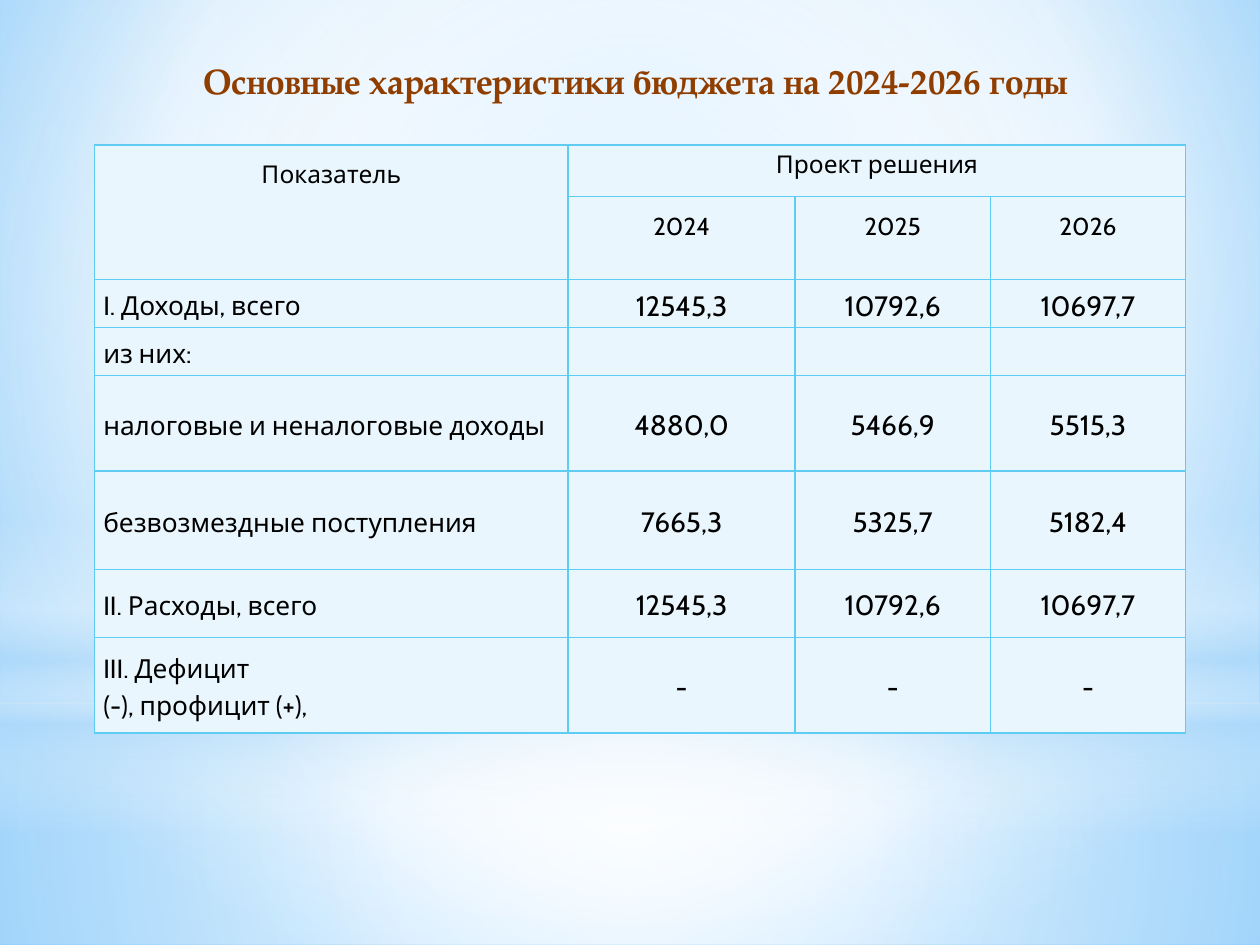
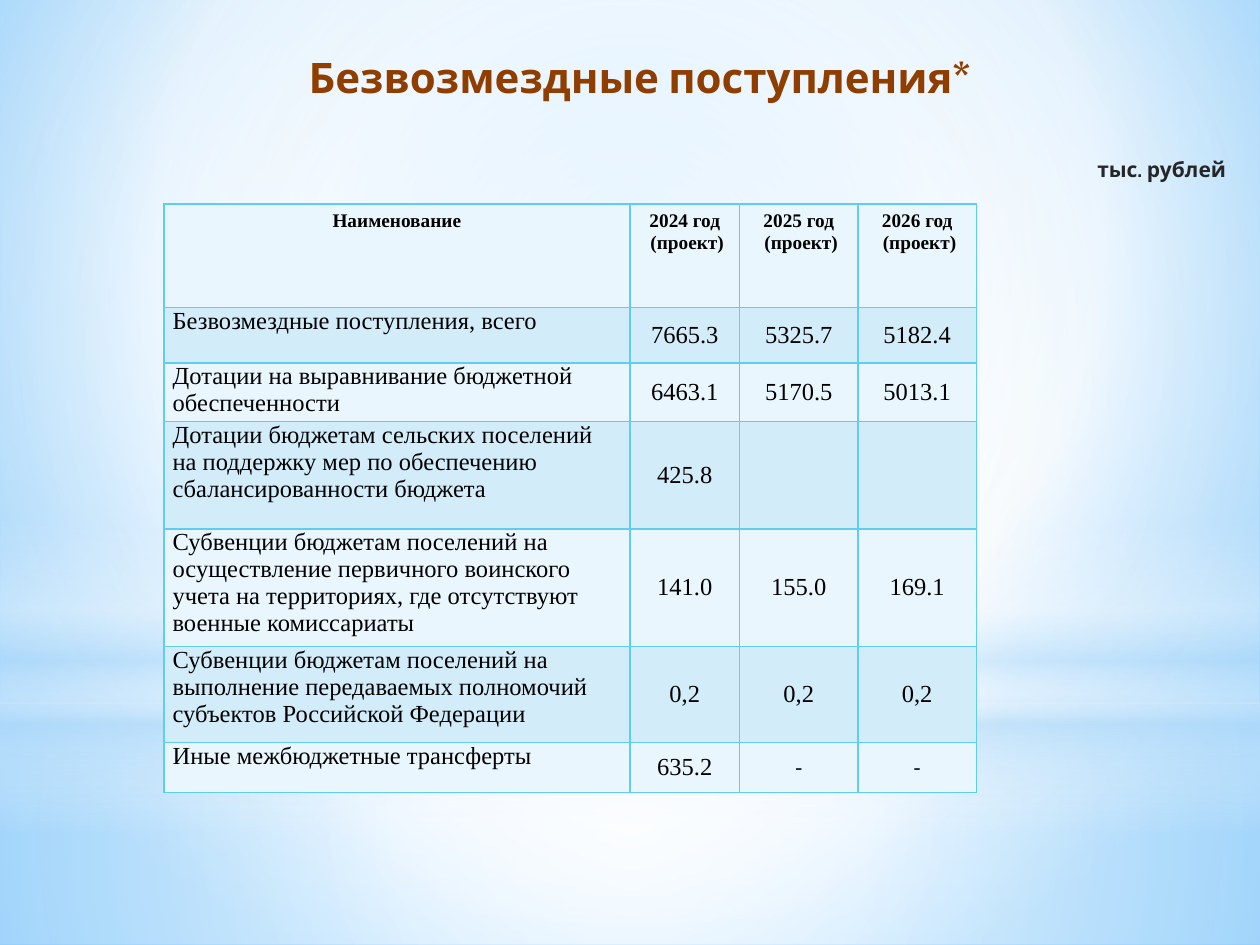
from dataclasses import dataclass

from lxml import etree
from pptx import Presentation
from pptx.dml.color import RGBColor
from pptx.enum.shapes import MSO_SHAPE
from pptx.enum.text import MSO_ANCHOR, PP_ALIGN
from pptx.oxml import parse_xml
from pptx.oxml.ns import nsdecls, qn
from pptx.util import Inches, Pt

RECT, OVAL = MSO_SHAPE.RECTANGLE, MSO_SHAPE.OVAL
LEFT, MID, RIGHT = PP_ALIGN.LEFT, PP_ALIGN.CENTER, PP_ALIGN.RIGHT
TOP, CENTER = MSO_ANCHOR.TOP, MSO_ANCHOR.MIDDLE


@dataclass(frozen=True)
class Theme:
    title: str = "903E00"
    ink: str = "000000"
    note: str = "262626"
    white: str = "FFFFFF"
    mist: str = "B4DCFA"
    sky: str = "9ED5FF"
    deep: str = "5BB9FF"
    pale: str = "EAF6FD"
    band: str = "D2ECFA"
    edge: str = "5ECCF3"
    sans: str = "Cabin"
    book: str = "TeX Gyre Pagella"
    serif: str = "Times New Roman"
    big: int = 24
    head: int = 20
    num: int = 16
    item: int = 15
    cell: int = 14
    small: int = 12
    tiny: int = 11


class Deck:
    def __init__(self, theme):
        self.theme = theme
        self.prs = Presentation()
        self.prs.slide_width, self.prs.slide_height = Inches(10), Inches(7.5)

    def start(self):
        self.slide = self.prs.slides.add_slide(self.prs.slide_layouts[6])
        self.scene()

    def blend(self, fill, root, stops, focus=None):
        fill.gradient()
        grad = next(root.iter(qn("a:gradFill")))
        marks = "".join(
            f'<a:gs pos="{pos * 1000}"><a:srgbClr val="{color}">'
            f'<a:alpha val="{alpha * 1000}"/></a:srgbClr></a:gs>'
            for pos, color, alpha in stops)
        if focus:
            sides = " ".join(f'{side}="{part * 1000}"' for side, part in zip("ltrb", focus))
            way = f'<a:path path="circle"><a:fillToRect {sides}/></a:path>'
        else:
            way = '<a:lin ang="5400000" scaled="0"/>'
        grad.getparent().replace(grad, parse_xml(
            f'<a:gradFill {nsdecls("a")} rotWithShape="1"><a:gsLst>{marks}</a:gsLst>{way}</a:gradFill>'))

    def glow(self, kind, top, height, stops, focus=(50, 50, 50, 50)):
        shape = self.slide.shapes.add_shape(kind, 0, Inches(top), Inches(10), Inches(height))
        shape.shadow.inherit = False
        shape.line.fill.background()
        self.blend(shape.fill, shape.element, stops, focus)

    def scene(self):
        t = self.theme
        self.blend(self.slide.background.fill, self.slide.element,
                   [(0, t.sky, 100), (60, t.white, 100), (100, t.deep, 100)], (20, 10, 20, 60))
        self.glow(RECT, 5.58, 1.92, [(0, t.white, 91), (37, t.white, 76), (100, t.mist, 79)])
        self.glow(RECT, 0, 5.58, [(0, t.white, 89), (48, t.white, 62), (100, t.mist, 79)])
        self.glow(RECT, 4.12, 2.5, [(0, t.white, 0), (29, t.white, 30), (45, t.mist, 40),
                                    (55, t.white, 26), (65, t.mist, 60), (100, t.white, 0)], None)
        self.glow(OVAL, 1.75, 5.58, [(0, t.white, 100), (56, t.white, 0)])

    def words(self, frame, text, size, face, color, bold=False, align=MID, lead=None):
        frame.text = text
        for para in frame.paragraphs:
            para.alignment = align
            para.line_spacing = lead
            font = para.font
            font.size, font.name, font.bold = Pt(size), face, bold
            font.color.rgb = RGBColor.from_string(color)

    def text(self, top, height, text, size, face, color, align=MID, anchor=TOP, drop=0.05):
        box = self.slide.shapes.add_textbox(Inches(0.33), Inches(top), Inches(9.5), Inches(height))
        frame = box.text_frame
        frame.word_wrap = True
        frame.vertical_anchor = anchor
        frame.margin_top = Inches(drop)
        self.words(frame, text, size, face, color, True, align)

    def grid(self, left, top, cols, rows):
        table = self.slide.shapes.add_table(
            len(rows), len(cols), Inches(left), Inches(top),
            Inches(sum(cols)), Inches(sum(rows))).table
        table.first_row = table.horz_banding = False
        for col, width in zip(table.columns, cols):
            col.width = Inches(width)
        for row, height in zip(table.rows, rows):
            row.height = Inches(height)
        return table

    def cell(self, cell, text, size, face, fill, align=MID, anchor=CENTER,
             bold=False, lead=None, pad=(0.07, 0)):
        cell.margin_left = cell.margin_right = Inches(pad[0])
        cell.margin_top = cell.margin_bottom = Inches(pad[1])
        cell.vertical_anchor = anchor
        cell.fill.solid()
        cell.fill.fore_color.rgb = RGBColor.from_string(fill)
        self.words(cell.text_frame, text, size, face, self.theme.ink, bold, align, lead)
        props = cell._tc.get_or_add_tcPr()
        for spot, side in enumerate("LRTB"):
            line = etree.Element(qn(f"a:ln{side}"), w=str(Pt(1)))
            solid = etree.SubElement(line, qn("a:solidFill"))
            etree.SubElement(solid, qn("a:srgbClr"), val=self.theme.edge)
            props.insert(spot, line)


def budget(deck):
    t = deck.theme
    deck.start()
    deck.text(0.13, 1.02, "Основные характеристики бюджета на 2024-2026 годы ",
              t.head, t.book, t.title, anchor=CENTER)
    data = [
        ("Показатель", "Проект решения", "", ""),
        ("", "2024", "2025", "2026"),
        ("I. Доходы, всего", "12545,3", "10792,6", "10697,7"),
        ("из них:", "", "", ""),
        ("налоговые и неналоговые доходы", "4880,0", "5466,9", "5515,3"),
        ("безвозмездные поступления", "7665,3", "5325,7", "5182,4"),
        ("II. Расходы, всего", "12545,3", "10792,6", "10697,7"),
        ("III. Дефицит\n(-), профицит (+),", "-", "-", "-"),
    ]
    table = deck.grid(0.75, 1.15, [3.76, 1.8, 1.55, 1.55],
                      [0.41, 0.66, 0.38, 0.38, 0.76, 0.78, 0.54, 0.76])
    table.cell(0, 0).merge(table.cell(1, 0))
    table.cell(0, 1).merge(table.cell(0, 3))
    for r, row in enumerate(data):
        for c, text in enumerate(row):
            cell = table.cell(r, c)
            if r < 2:
                lead = 1.15 if (r, c) == (0, 1) else 1.5
                deck.cell(cell, text, t.cell, t.sans, t.pale, anchor=TOP, lead=lead)
            else:
                size, align = (t.num, MID) if c else (t.item, LEFT)
                deck.cell(cell, text, size, t.sans, t.pale, align, lead=1.15)


def grants(deck):
    t = deck.theme
    deck.start()
    deck.text(0.36, 0.63, "Безвозмездные поступления*", t.big, t.sans, t.title)
    deck.text(0.92, 5.73, "тыс. рублей", t.small, t.sans, t.note, RIGHT, drop=0.32)
    data = [
        ("Наименование", *(f"{year} год\n (проект)" for year in range(2024, 2027))),
        ("Безвозмездные поступления, всего", "7665.3", "5325.7", "5182.4"),
        ("Дотации на выравнивание бюджетной обеспеченности", "6463.1", "5170.5", "5013.1"),
        ("Дотации бюджетам сельских поселений на поддержку мер по обеспечению "
         "сбалансированности бюджета", "425.8", "", ""),
        ("Субвенции бюджетам поселений на осуществление первичного воинского учета "
         "на территориях, где отсутствуют военные комиссариаты", "141.0", "155.0", "169.1"),
        ("Субвенции бюджетам поселений на выполнение передаваемых полномочий "
         "субъектов Российской Федерации", "0,2", "0,2", "0,2"),
        ("Иные межбюджетные трансферты", "635.2", "-", "-"),
    ]
    table = deck.grid(1.3, 1.62, [3.7, 0.87, 0.94, 0.94],
                      [0.82, 0.44, 0.43, 0.85, 0.85, 0.76, 0.4])
    for r, row in enumerate(data):
        fill = t.band if r % 2 else t.pale
        for c, text in enumerate(row):
            cell = table.cell(r, c)
            if r == 0:
                deck.cell(cell, text, t.tiny, t.serif, fill, anchor=TOP, bold=True, pad=(0.1, 0.05))
            else:
                size = t.small if text == "-" else t.cell
                align, anchor = (MID, CENTER) if c else (LEFT, TOP)
                deck.cell(cell, text, size, t.serif, fill, align, anchor)


def main():
    deck = Deck(Theme())
    budget(deck)
    grants(deck)
    deck.prs.save("out.pptx")


if __name__ == "__main__":
    main()
